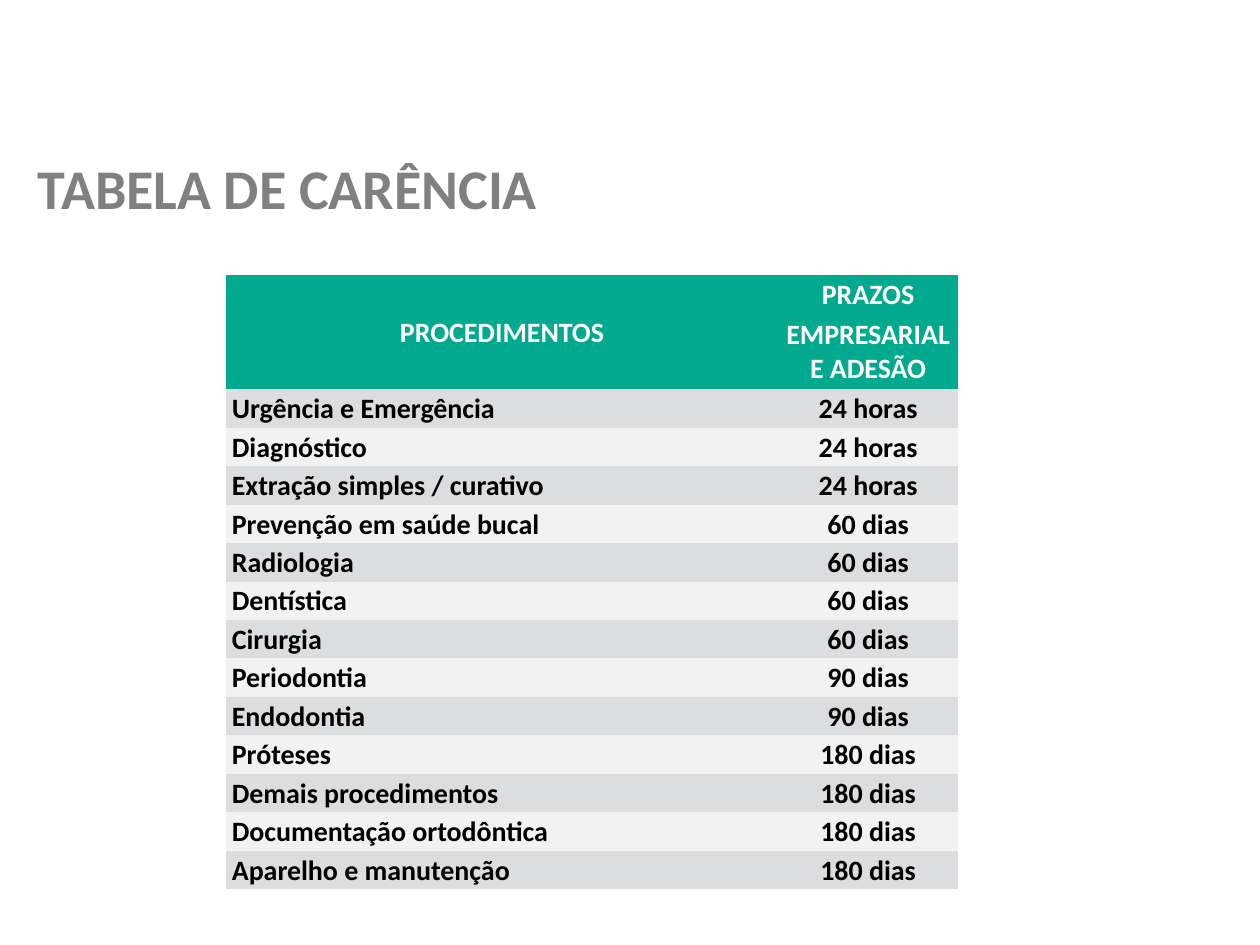
from pptx import Presentation
from pptx.util import Inches, Pt
from pptx.dml.color import RGBColor
from pptx.enum.text import PP_ALIGN, MSO_ANCHOR, MSO_AUTO_SIZE

TITLE = "TABELA DE CARÊNCIA"
HEADS = [("PROCEDIMENTOS", "PRAZOS"), ("", "EMPRESARIAL\nE ADESÃO")]
TERMS = [
    ("Urgência e Emergência", "24 horas"),
    ("Diagnóstico", "24 horas"),
    ("Extração simples / curativo", "24 horas"),
    ("Prevenção em saúde bucal", "60 dias"),
    ("Radiologia", "60 dias"),
    ("Dentística", "60 dias"),
    ("Cirurgia", "60 dias"),
    ("Periodontia", "90 dias"),
    ("Endodontia", "90 dias"),
    ("Próteses", "180 dias"),
    ("Demais procedimentos", "180 dias"),
    ("Documentação ortodôntica", "180 dias"),
    ("Aparelho e manutenção", "180 dias"),
]
COLORS = {"head": "01A98F", "odd": "DCDDDE", "even": "F2F2F2",
          "title": "808080", "white": "FFFFFF", "black": "000000"}
LEFT, TOP, HEIGHT = 1.79, 2.18, 4.88
WIDTHS = [4.39, 1.42]
HEAD_ROWS = [0.31, 0.6]
PLAIN = "{2D5ABB26-0587-4C30-8999-92F81FD0307C}"  # table style without borders


def paint(name):
    return RGBColor.from_string(COLORS[name])


def write(frame, text, size=16, color="black", align=PP_ALIGN.LEFT,
          indent=0, spacing=None):
    frame.text = text
    for para in frame.paragraphs:
        para.alignment = align
        para.line_spacing = spacing
        if indent:
            para._p.get_or_add_pPr().set("marL", str(Inches(indent)))
        for run in para.runs:
            font = run.font
            font.name, font.size, font.bold = "Calibri", Pt(size), True
            font.color.rgb = paint(color)


deck = Presentation()
deck.slide_width, deck.slide_height = Inches(10), Inches(7.5)
slide = deck.slides.add_slide(deck.slide_layouts[5])

# Title
title = slide.shapes.title
title.left, title.top = Inches(0.2), Inches(1.27)
title.width, title.height = Inches(4.33), Inches(0.54)
frame = title.text_frame
write(frame, TITLE, size=32, color="title", spacing=0.8)
frame.word_wrap = True
frame.auto_size = MSO_AUTO_SIZE.SHAPE_TO_FIT_TEXT
frame.vertical_anchor = MSO_ANCHOR.TOP

# Table grid
rows = HEADS + TERMS
table = slide.shapes.add_table(len(rows), len(WIDTHS), Inches(LEFT), Inches(TOP),
                               Inches(sum(WIDTHS)), Inches(HEIGHT)).table
table._tbl.tblPr[0].text = PLAIN
for col, width in zip(table.columns, WIDTHS):
    col.width = Inches(width)
step = (HEIGHT - sum(HEAD_ROWS)) / len(TERMS)
for row, height in zip(table.rows, HEAD_ROWS + [step] * len(TERMS)):
    row.height = Inches(height)
table.cell(0, 0).merge(table.cell(1, 0))

# Table cells
for r, texts in enumerate(rows):
    head = r < len(HEADS)
    fill = "head" if head else ("odd", "even")[r % 2]
    for c, text in enumerate(texts):
        cell = table.cell(r, c)
        cell.fill.solid()
        cell.fill.fore_color.rgb = paint(fill)
        cell.vertical_anchor = MSO_ANCHOR.MIDDLE
        cell.margin_left = cell.margin_top = cell.margin_right = Inches(0.01)
        cell.margin_bottom = 0
        if cell.is_spanned:
            continue
        label = c == 0 and not head
        write(cell.text_frame, text, color="white" if head else "black",
              align=PP_ALIGN.LEFT if label else PP_ALIGN.CENTER,
              indent=0.04 if label else 0)

deck.save("out.pptx")
